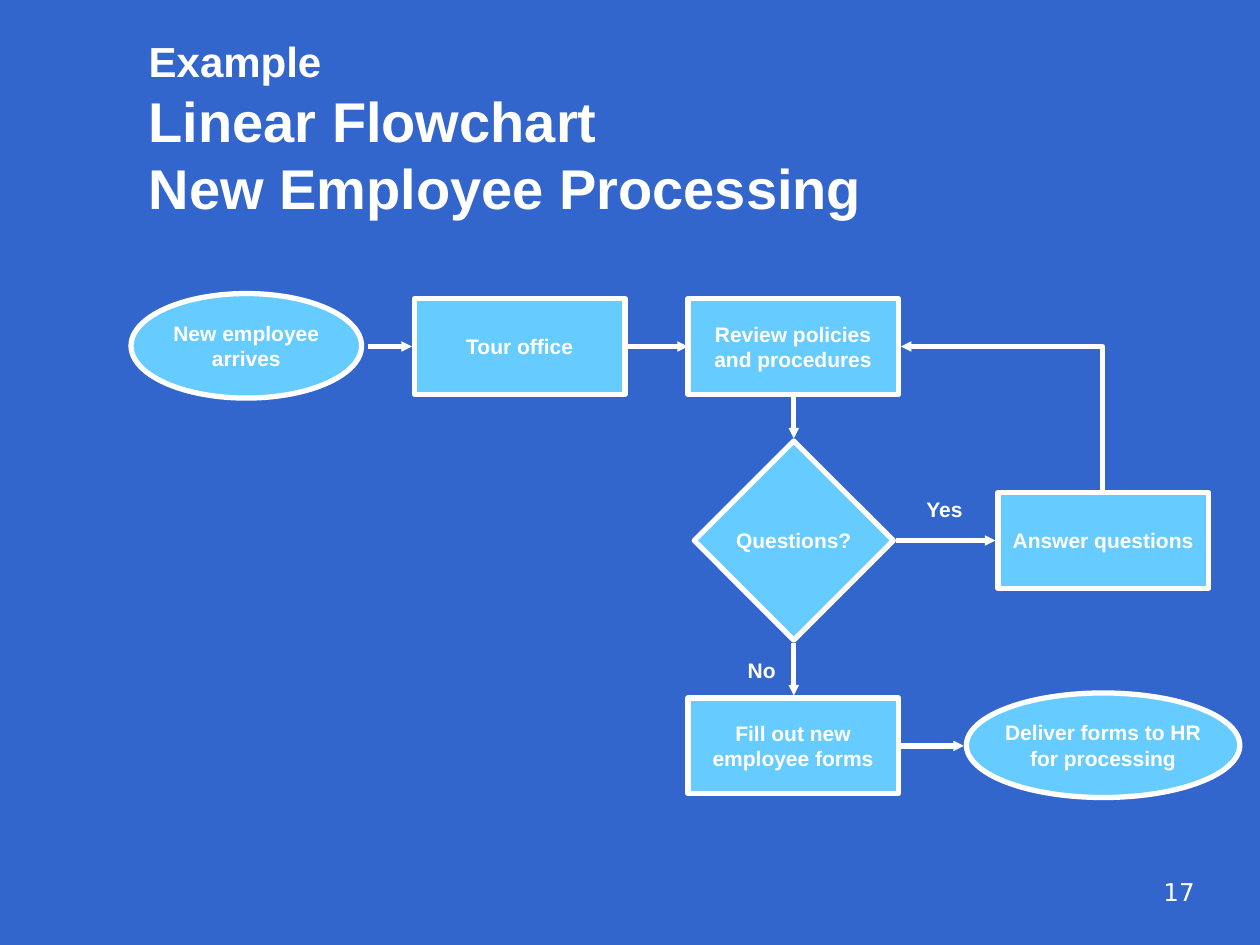
import copy
import pptx
import pptx.util
import pptx.dml.color
import pptx.enum.shapes
import pptx.enum.text
import pptx.oxml
import pptx.oxml.ns

Inches = pptx.util.Inches
Shape = pptx.enum.shapes.MSO_SHAPE
Link = pptx.enum.shapes.MSO_CONNECTOR
Align = pptx.enum.text.PP_ALIGN
Anchor = pptx.enum.text.MSO_ANCHOR
qn = pptx.oxml.ns.qn

BLUE, SKY, WHITE = "3366CC", "66CCFF", "FFFFFF"


def color(code):
    return pptx.dml.color.RGBColor.from_string(code)


def style(font, size, face="Arial", bold=True):
    font.size = pptx.util.Pt(size)
    font.name = face
    font.bold = bold
    font.color.rgb = color(WHITE)


def stroke(line):
    line.color.rgb = color(WHITE)
    line.width = pptx.util.Pt(3)


def label(shapes, box, words, align=Align.CENTER, **look):
    area = shapes.add_textbox(*map(Inches, box))
    frame = area.text_frame
    frame.word_wrap = True
    frame.text = words
    para = frame.paragraphs[0]
    para.alignment = align
    style(para.runs[0].font, **look)


def title(slide, box, lines):
    head = slide.shapes.title
    head.left, head.top, head.width, head.height = map(Inches, box)
    frame = head.text_frame
    frame.word_wrap = True
    frame.auto_size = pptx.enum.text.MSO_AUTO_SIZE.NONE
    frame.vertical_anchor = Anchor.BOTTOM
    para = frame.paragraphs[0]
    para.text = "\v".join(words for words, _ in lines)
    para.alignment = Align.LEFT
    for run, (_, size) in zip(para.runs, lines):
        style(run.font, size)
    # Each break takes the size of the line it ends
    for gap, run in zip(para._p.findall(qn("a:br")), para.runs):
        gap.append(copy.deepcopy(run._r.rPr))


def node(slide, kind, box, words, width, rows):
    """A filled shape with its label centred on it."""
    group = slide.shapes.add_group_shape()
    left, top, wide, high = box
    shape = group.shapes.add_shape(kind, *map(Inches, box))
    shape.shadow.inherit = False
    shape.fill.solid()
    shape.fill.fore_color.rgb = color(SKY)
    stroke(shape.line)
    tall = 0.1 + 0.2 * rows
    spot = (left + (wide - width) / 2, top + (high - tall) / 2, width, tall)
    label(group.shapes, spot, words, size=12)


def arrow(slide, ends, kind=Link.STRAIGHT):
    link = slide.shapes.add_connector(kind, *map(Inches, ends))
    stroke(link.line)
    props = link._element.spPr
    tip = pptx.oxml.parse_xml(
        '<a:tailEnd %s type="triangle" w="sm" len="sm"/>' % pptx.oxml.ns.nsdecls("a"))
    props.find(qn("a:ln")).append(tip)
    props.append(props.makeelement(qn("a:effectLst"), {}))
    return props


def loop(slide, ends):
    """One-bend arrow up and to the left: a quarter-turned elbow."""
    x1, y1, x2, y2 = ends
    mid, row = (x1 + x2) / 2, (y1 + y2) / 2
    wide, high = y1 - y2, x1 - x2
    props = arrow(slide, (mid + wide / 2, row - high / 2,
                          mid - wide / 2, row + high / 2), Link.ELBOW)
    props.find(qn("a:prstGeom")).set("prst", "bentConnector2")
    props.find(qn("a:xfrm")).set("rot", str(90 * 60000))


def chart(slide):
    wide, high = 1.67, 0.76
    top, mid, low = 2.37, 3.91, 5.54
    # Steps: kind, box, words, label width, label rows
    steps = [
        (Shape.OVAL, (1.04, 2.33, 1.83, 0.83), "New employee arrives", 1.92, 2),
        (Shape.RECTANGLE, (3.29, top, wide, high), "Tour office", wide, 1),
        (Shape.RECTANGLE, (5.46, top, wide, high), "Review policies and procedures", wide, 2),
        (Shape.DIAMOND, (5.51, 3.5, 1.58, 1.58), "Questions?", 1.17, 1),
        (Shape.RECTANGLE, (7.92, mid, wide, high), "Answer questions", wide, 1),
        (Shape.RECTANGLE, (5.46, low, wide, high), "Fill out new employee forms", wide, 2),
        (Shape.OVAL, (7.67, 5.5, 2.17, 0.83), "Deliver forms to HR for processing", 1.83, 2),
    ]
    for step in steps:
        node(slide, *step)

    # Flow between the steps
    for x1, x2, y in [(2.92, 3.27, 2.75), (4.98, 5.46, 2.75),
                      (7.11, 7.9, 4.29), (7.13, 7.65, 5.92)]:
        arrow(slide, (x1, y, x2, y))
    for y1, y2 in [(3.15, 3.48), (5.1, 5.52)]:
        arrow(slide, (6.3, y1, 6.3, y2))
    loop(slide, (8.75, 3.89, 7.15, 2.75))

    # Answers at the decision
    label(slide.shapes, (7.12, 3.89, 0.75, 0.3), "Yes", size=12)
    label(slide.shapes, (5.67, 5.17, 0.75, 0.3), "No", size=12)


def main():
    deck = pptx.Presentation()
    deck.slide_width, deck.slide_height = Inches(10), Inches(7.5)
    slide = deck.slides.add_slide(deck.slide_layouts[5])
    slide.background.fill.solid()
    slide.background.fill.fore_color.rgb = color(BLUE)
    title(slide, (1.08, 0.72, 8.5, 1.08),
          [("Example", 24), ("Linear Flowchart", 32), ("New Employee Processing", 32)])
    chart(slide)
    # Page number
    label(slide.shapes, (7.5, 6.91, 2.08, 0.5), "17", Align.RIGHT,
          size=14, face="DejaVu Sans", bold=False)
    deck.save("out.pptx")


if __name__ == "__main__":
    main()
